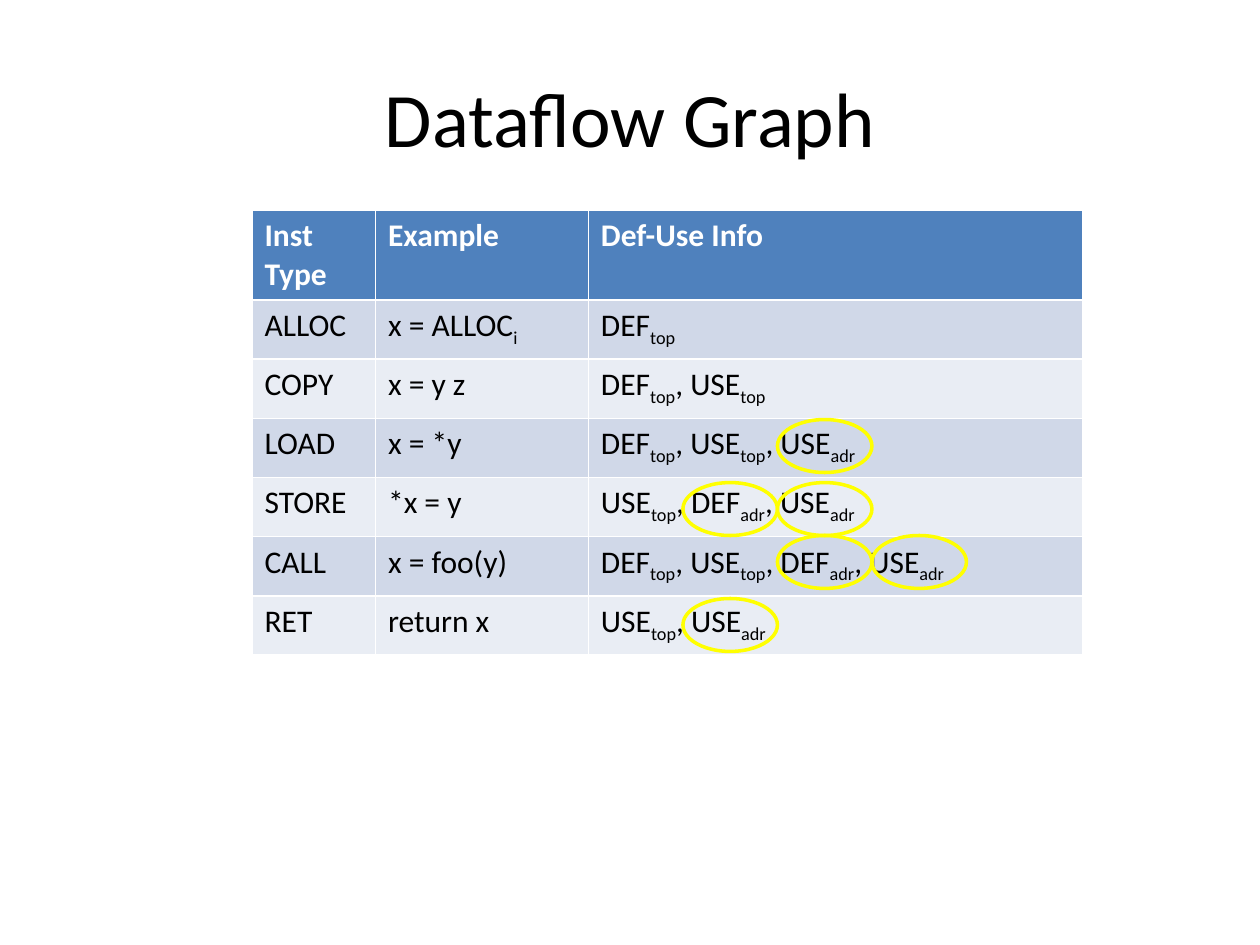
from typing import NamedTuple

from pptx import Presentation
from pptx.dml.color import RGBColor
from pptx.enum.shapes import MSO_SHAPE as Shape
from pptx.enum.text import MSO_ANCHOR as Anchor, PP_ALIGN as Align
from pptx.util import Inches, Pt

COLORS = {
    "text": "000000",
    "header_text": "FFFFFF",
    "header": "4F81BD",
    "odd_row": "D0D8E8",
    "even_row": "E9EDF4",
    "highlight": "FFFF00",
}
FONT = "Calibri"
SUBSCRIPT_MARK = "|"  # text between two marks is set as a subscript

COLUMN_WIDTHS = (0.98, 1.69, 3.92)
ROW_HEIGHT = 0.47
TABLE_LEFT, TABLE_TOP = 2, 1.67

RING_WIDTH, RING_HEIGHT = 0.75, 0.42
RING_LEFT = 5.42


class Instruction(NamedTuple):
    kind: str
    example: str
    def_use: str


class RingRow(NamedTuple):
    """Highlighted terms of one instruction, as columns of the ring grid."""
    top: float
    columns: tuple[int, ...]


HEADER = Instruction("Inst Type", "Example", "Def-Use Info")
INSTRUCTIONS = (
    Instruction("ALLOC", "x = ALLOC|i|", "DEF|top|"),
    Instruction("COPY", "x = y z", "DEF|top|, USE|top|"),
    Instruction("LOAD", "x = *y", "DEF|top|, USE|top|, USE|adr|"),
    Instruction("STORE", "*x = y", "USE|top|, DEF|adr|, USE|adr|"),
    Instruction("CALL", "x = foo(y)", "DEF|top|, USE|top|, DEF|adr|, USE|adr|"),
    Instruction("RET", "return x", "USE|top|, USE|adr|"),
)
RING_ROWS = (
    RingRow(3.33, (1,)),
    RingRow(3.83, (1, 0)),
    RingRow(4.25, (1, 2)),
    RingRow(4.75, (0,)),
)


def rgb(name: str) -> RGBColor:
    return RGBColor.from_string(COLORS[name])


def write(frame, text: str, *, size: float = 18, color: str = "text",
          bold: bool = False, align: Align = Align.LEFT) -> None:
    paragraph = frame.paragraphs[0]
    paragraph.alignment = align
    for index, part in enumerate(text.split(SUBSCRIPT_MARK)):
        if not part:
            continue
        run = paragraph.add_run()
        run.text = part
        run.font.name, run.font.size, run.font.bold = FONT, Pt(size), bold
        run.font.color.rgb = rgb(color)
        if index % 2:
            run.font._element.set("baseline", "-25000")


def add_title(slide, text: str) -> None:
    title = slide.shapes.title
    title.left, title.top = Inches(0.5), Inches(0.3)
    title.width, title.height = Inches(9), Inches(1.25)
    title.text_frame.vertical_anchor = Anchor.MIDDLE
    write(title.text_frame, text, size=44, align=Align.CENTER)


def add_instruction_table(slide) -> None:
    rows = (HEADER, *INSTRUCTIONS)
    table = slide.shapes.add_table(
        len(rows), len(COLUMN_WIDTHS), Inches(TABLE_LEFT), Inches(TABLE_TOP),
        Inches(sum(COLUMN_WIDTHS)), Inches(ROW_HEIGHT * len(rows))).table
    for column, width in zip(table.columns, COLUMN_WIDTHS):
        column.width = Inches(width)
    for number, (row, instruction) in enumerate(zip(table.rows, rows)):
        is_header = number == 0
        fill = "header" if is_header else "odd_row" if number % 2 else "even_row"
        row.height = Inches(ROW_HEIGHT)
        for cell, text in zip(row.cells, instruction):
            cell.fill.solid()
            cell.fill.fore_color.rgb = rgb(fill)
            write(cell.text_frame, text, bold=is_header,
                  color="header_text" if is_header else "text")


def add_ring(slide, column: int, top: float) -> None:
    ring = slide.shapes.add_shape(
        Shape.OVAL, Inches(RING_LEFT + column * RING_WIDTH), Inches(top),
        Inches(RING_WIDTH), Inches(RING_HEIGHT))
    ring.shadow.inherit = False
    ring.fill.background()
    ring.line.color.rgb = rgb("highlight")
    ring.line.width = Pt(2)


def main() -> None:
    deck = Presentation()
    deck.slide_width, deck.slide_height = Inches(10), Inches(7.5)
    slide = deck.slides.add_slide(deck.slide_layouts.get_by_name("Title Only"))
    add_title(slide, "Dataflow Graph")
    add_instruction_table(slide)
    for ring_row in RING_ROWS:
        for column in ring_row.columns:
            add_ring(slide, column, ring_row.top)
    deck.save("out.pptx")


if __name__ == "__main__":
    main()
